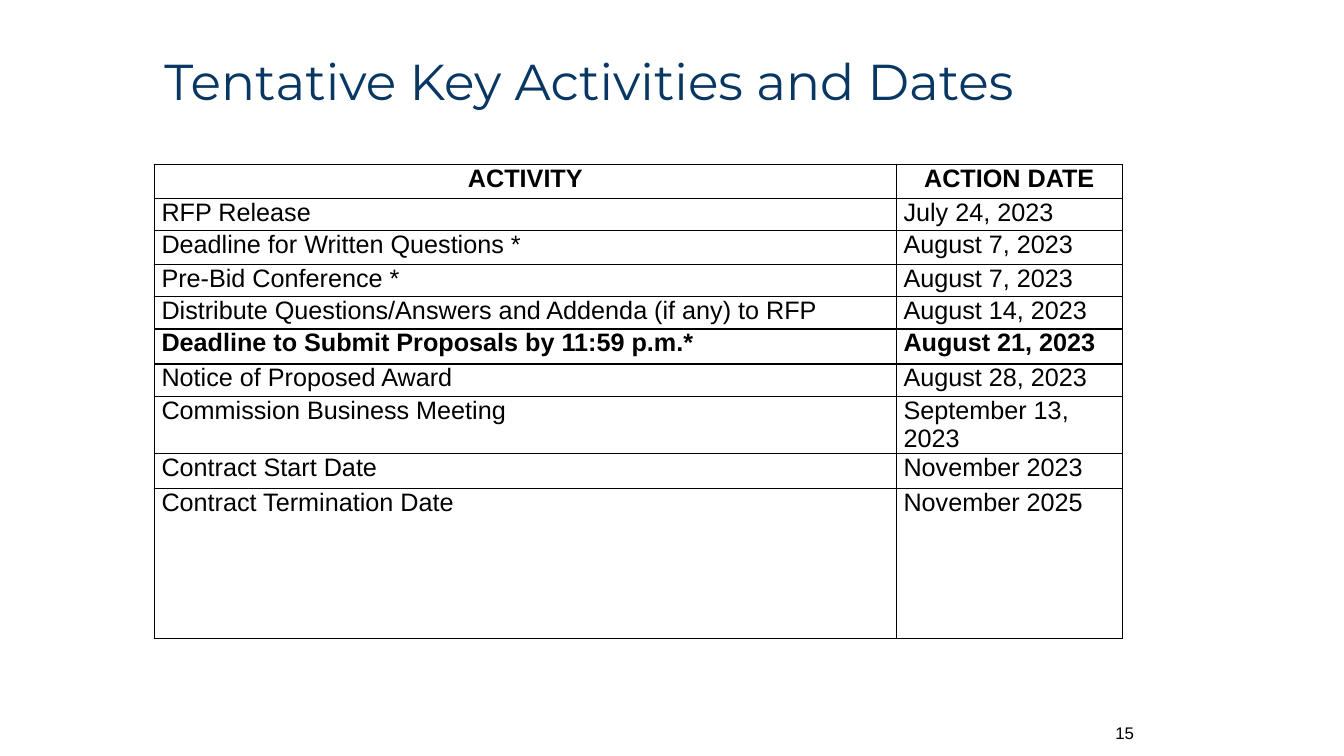
import dataclasses

import lxml.etree
import pptx
import pptx.dml.color
import pptx.enum.text
import pptx.oxml.ns
import pptx.util

Cm = pptx.util.Cm
Pt = pptx.util.Pt
Align = pptx.enum.text.PP_ALIGN
Anchor = pptx.enum.text.MSO_ANCHOR


@dataclasses.dataclass(frozen=True)
class Theme:
    navy: str = "083763"
    black: str = "000000"
    white: str = "FFFFFF"
    head: str = "Montserrat"
    body: str = "Arial"
    title: int = 36
    table: int = 18
    number: int = 12
    border: int = 1


class Deck:
    def __init__(self, theme):
        self.theme = theme
        self.file = pptx.Presentation()
        self.file.slide_width = Cm(33.87)
        self.file.slide_height = Cm(19.05)
        self.slide = self.file.slides.add_slide(self.file.slide_layouts[5])

    def text(self, para, words, size, font, color, bold=False):
        run = para.add_run()
        run.text = words
        run.font.size = Pt(size)
        run.font.name = font
        run.font.bold = bold
        run.font.color.rgb = pptx.dml.color.RGBColor.from_string(color)

    def frame(self, shape, align):
        frame = shape.text_frame
        frame.word_wrap = True
        frame.auto_size = pptx.enum.text.MSO_AUTO_SIZE.NONE
        frame.vertical_anchor = Anchor.MIDDLE
        para = frame.paragraphs[0]
        para.alignment = align
        return para

    def title(self, words, left, top, width, height):
        shape = self.slide.shapes.title
        shape.left, shape.top = Cm(left), Cm(top)
        shape.width, shape.height = Cm(width), Cm(height)
        para = self.frame(shape, Align.LEFT)
        para.line_spacing = 0.9
        self.text(para, words, self.theme.title, self.theme.head, self.theme.navy)

    def number(self, words, left, top, width, height):
        shape = self.slide.shapes.add_textbox(Cm(left), Cm(top), Cm(width), Cm(height))
        para = self.frame(shape, Align.RIGHT)
        self.text(para, words, self.theme.number, self.theme.body, self.theme.black)

    def border(self, cell):
        props = cell._tc.get_or_add_tcPr()
        name = pptx.oxml.ns.qn
        for index, side in enumerate(("a:lnL", "a:lnR", "a:lnT", "a:lnB")):
            line = lxml.etree.Element(name(side), w=str(Pt(self.theme.border)))
            fill = lxml.etree.SubElement(line, name("a:solidFill"))
            lxml.etree.SubElement(fill, name("a:srgbClr"), val=self.theme.black)
            props.insert(index, line)

    def cell(self, cell, words, align, bold, after):
        cell.margin_left = cell.margin_right = Cm(0.18)
        cell.margin_top = cell.margin_bottom = 0
        cell.vertical_anchor = Anchor.TOP
        cell.fill.solid()
        cell.fill.fore_color.rgb = pptx.dml.color.RGBColor.from_string(self.theme.white)
        self.border(cell)
        para = cell.text_frame.paragraphs[0]
        para.alignment = align
        para.space_after = Pt(after)
        self.text(para, words, self.theme.table, self.theme.body, self.theme.black, bold)

    def table(self, rows, left, top, widths, heights, strong):
        table = self.slide.shapes.add_table(
            len(rows), len(widths), Cm(left), Cm(top), Cm(sum(widths)), Cm(sum(heights))
        ).table
        table.horz_banding = False
        for column, width in zip(table.columns, widths):
            column.width = Cm(width)
        for r, (texts, height) in enumerate(zip(rows, heights)):
            table.rows[r].height = Cm(height)
            align = Align.LEFT if r else Align.CENTER
            for c, words in enumerate(texts):
                after = 3 if r and c else 6
                self.cell(table.cell(r, c), words, align, r in strong, after)


def main():
    deck = Deck(Theme())
    deck.title("Tentative Key Activities and Dates", 3.89, 0.66, 27.66, 2.9)
    dates = [
        ("ACTIVITY", "ACTION DATE"),
        ("RFP Release", "July 24, 2023"),
        ("Deadline for Written Questions *", "August 7, 2023"),
        ("Pre-Bid Conference *", "August 7, 2023"),
        ("Distribute Questions/Answers and Addenda (if any) to RFP", "August 14, 2023"),
        ("Deadline to Submit Proposals by 11:59 p.m.*", "August 21, 2023"),
        ("Notice of Proposed Award", "August 28, 2023"),
        ("Commission Business Meeting", "September 13, 2023"),
        ("Contract Start Date", "November 2023"),
        ("Contract Termination Date", "November 2025"),
    ]
    heights = [0.86, 0.81, 0.86, 0.81, 0.81, 0.88, 0.83, 1.41, 0.88, 3.78]
    deck.table(dates, 3.89, 4.14, [18.7, 5.69], heights, strong=(0, 5))
    deck.number("15", 23.93, 17.96, 4.9, 1.02)
    deck.file.save("out.pptx")


if __name__ == "__main__":
    main()
